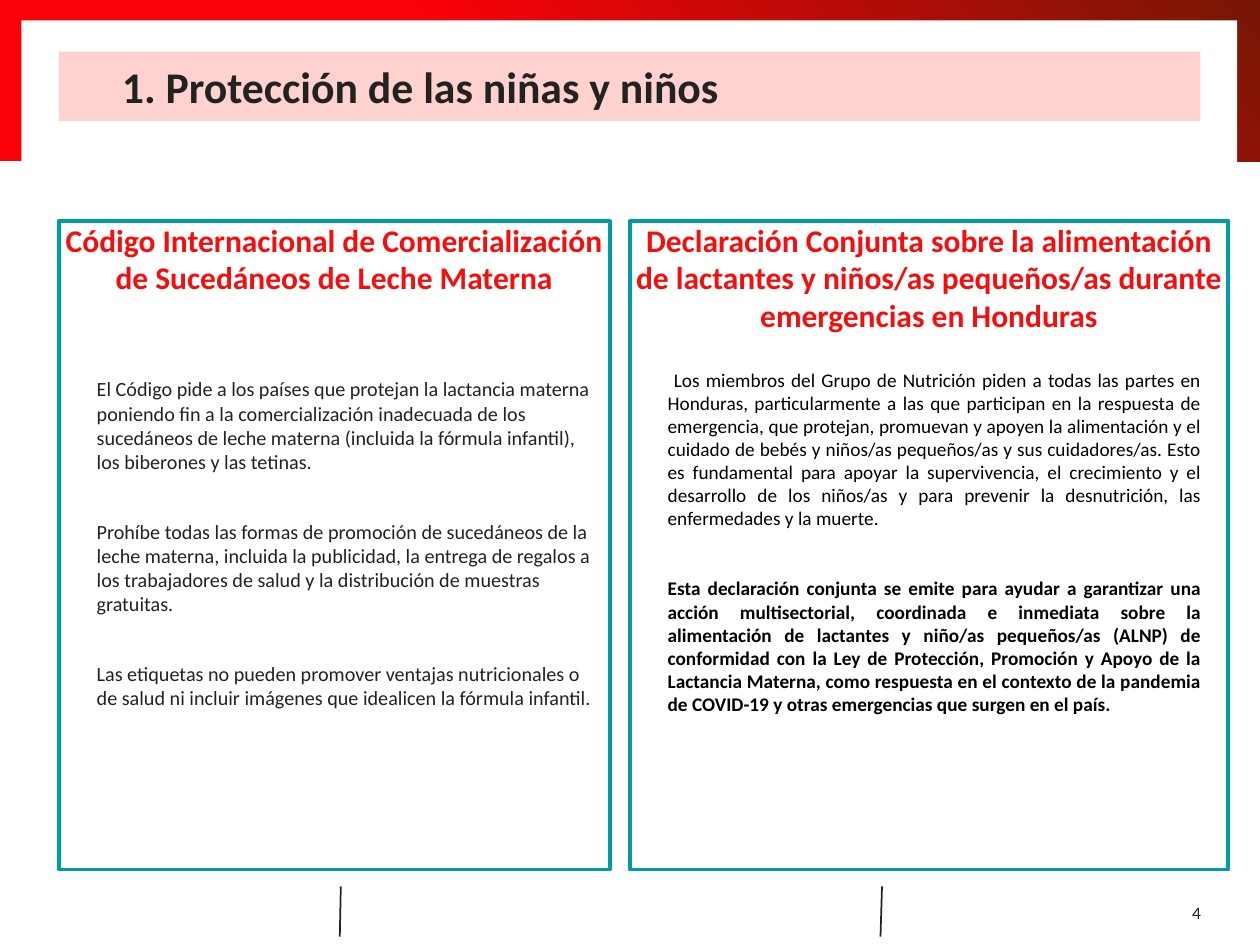
"""Build the slide on protecting girls and boys, with two framed text panels."""
from lxml import etree
from pptx import Presentation
from pptx.dml import color
from pptx.enum import shapes, text
from pptx.oxml import ns
from pptx.util import Cm, Pt

COLOURS = {name: color.RGBColor.from_string(value) for name, value in {
    "red": "FA0007", "maroon": "761706", "white": "FFFFFF", "ink": "222221",
    "pink": "FFCECA", "teal": "009CA6", "heading": "F20F0E", "black": "000000",
}.items()}
ALIGN = text.PP_ALIGN


def add_box(page, place, fill=None, line=None):
    box = page.shapes.add_shape(shapes.MSO_SHAPE.RECTANGLE, *map(Cm, place))
    box.shadow.inherit = False
    if fill:
        box.fill.solid()
        box.fill.fore_color.rgb = COLOURS[fill]
    else:
        box.fill.background()
    if line:
        box.line.color.rgb = COLOURS[line]
        box.line.width = Pt(2.25)
    else:
        box.line.fill.background()
    return box


def write(box, paragraphs, anchor, inset=(0, 0)):
    frame = box.text_frame
    frame.word_wrap = True
    frame.vertical_anchor = anchor
    frame.margin_left = frame.margin_right = Cm(inset[0])
    frame.margin_top = frame.margin_bottom = Cm(inset[1])
    for index, (words, style) in enumerate(paragraphs):
        para = frame.paragraphs[0] if index == 0 else frame.add_paragraph()
        para.alignment = style.get("align", ALIGN.LEFT)
        para.space_before = Pt(style.get("before", 0))
        for side in ("marL", "marR"):
            para._p.get_or_add_pPr().set(side, str(Cm(style.get(side, 0))))
        span = para.add_run()
        span.text = words
        settings = {"name": "Calibri", "size": Pt(style["size"]), "bold": style.get("bold", False)}
        for name, value in settings.items():
            setattr(span.font, name, value)
        span.font.color.rgb = COLOURS[style["colour"]]


deck = Presentation()
deck.slide_width, deck.slide_height = Cm(25.4), Cm(19.05)
page = deck.slides.add_slide(deck.slide_layouts[6])

band = add_box(page, (0, 0, 25.4, 3.25))
band.fill.gradient()
band.fill.gradient_angle = 45
for stop, (position, name) in zip(band.fill.gradient_stops, [(0.4, "red"), (1, "maroon")]):
    stop.position = position
    stop.color.rgb = COLOURS[name]
add_box(page, (0.43, 0.41, 24.51, 3), "white")

for top_x, bottom_x in [(6.87, 6.85), (17.78, 17.75)]:
    divider = page.shapes.add_connector(
        shapes.MSO_CONNECTOR.STRAIGHT, Cm(top_x), Cm(17.87), Cm(bottom_x), Cm(18.88))
    divider.line.color.rgb = COLOURS["ink"]
    divider.line.width = Pt(1)
    etree.SubElement(divider._element.spPr, ns.qn("a:effectLst"))

title = add_box(page, (1.19, 1.04, 23.01, 1.4), "pink")
tint = title._element.spPr.find(".//" + ns.qn("a:srgbClr"))
etree.SubElement(tint, ns.qn("a:alpha")).set("val", "90000")
write(title, [("1. Protección de las niñas y niños",
               {"size": 25, "colour": "ink", "bold": True, "marL": 1.27})],
      text.MSO_ANCHOR.MIDDLE)

heading = {"size": 18, "colour": "heading", "bold": True, "align": ALIGN.CENTER}
code = {"size": 11.5, "colour": "ink", "marL": 0.76, "marR": 0.3, "before": 26}
statement = {"size": 11, "colour": "black", "marL": 0.76, "marR": 0.54, "align": ALIGN.JUSTIFY}
panels = [
    (1.19, 11.1, [
        ("Código Internacional de Comercialización de Sucedáneos de Leche Materna", heading),
        ("El Código pide a los países que protejan la lactancia materna poniendo fin a la "
         "comercialización inadecuada de los sucedáneos de leche materna (incluida la fórmula "
         "infantil), los biberones y las tetinas.", {**code, "before": 46}),
        ("Prohíbe todas las formas de promoción de sucedáneos de la leche materna, incluida la "
         "publicidad, la entrega de regalos a los trabajadores de salud y la distribución de "
         "muestras gratuitas.", code),
        ("Las etiquetas no pueden promover ventajas nutricionales o de salud ni incluir imágenes "
         "que idealicen la fórmula infantil.", code),
    ]),
    (12.7, 12.06, [
        ("Declaración Conjunta sobre la alimentación de lactantes y niños/as pequeños/as durante "
         "emergencias en Honduras", heading),
        (" Los miembros del Grupo de Nutrición piden a todas las partes en Honduras, "
         "particularmente a las que participan en la respuesta de emergencia, que protejan, "
         "promuevan y apoyen la alimentación y el cuidado de bebés y niños/as pequeños/as y sus "
         "cuidadores/as. Esto es fundamental para apoyar la supervivencia, el crecimiento y el "
         "desarrollo de los niños/as y para prevenir la desnutrición, las enfermedades y la "
         "muerte.", {**statement, "before": 19.4}),
        ("Esta declaración conjunta se emite para ayudar a garantizar una acción multisectorial, "
         "coordinada e inmediata sobre la alimentación de lactantes y niño/as pequeños/as (ALNP) "
         "de conformidad con la Ley de Protección, Promoción y Apoyo de la Lactancia Materna, "
         "como respuesta en el contexto de la pandemia de COVID-19 y otras emergencias que surgen "
         "en el país.", {**statement, "before": 26.8, "bold": True}),
    ]),
]
for left, width, paragraphs in panels:
    panel = add_box(page, (left, 4.45, width, 13.08), line="teal")
    write(panel, paragraphs, text.MSO_ANCHOR.TOP)

number = page.shapes.add_textbox(Cm(22.3), Cm(17.88), Cm(2.16), Cm(1.02))
write(number, [("4", {"size": 10, "colour": "ink", "align": ALIGN.RIGHT})],
      text.MSO_ANCHOR.MIDDLE, (0.25, 0.13))

deck.save("out.pptx")
